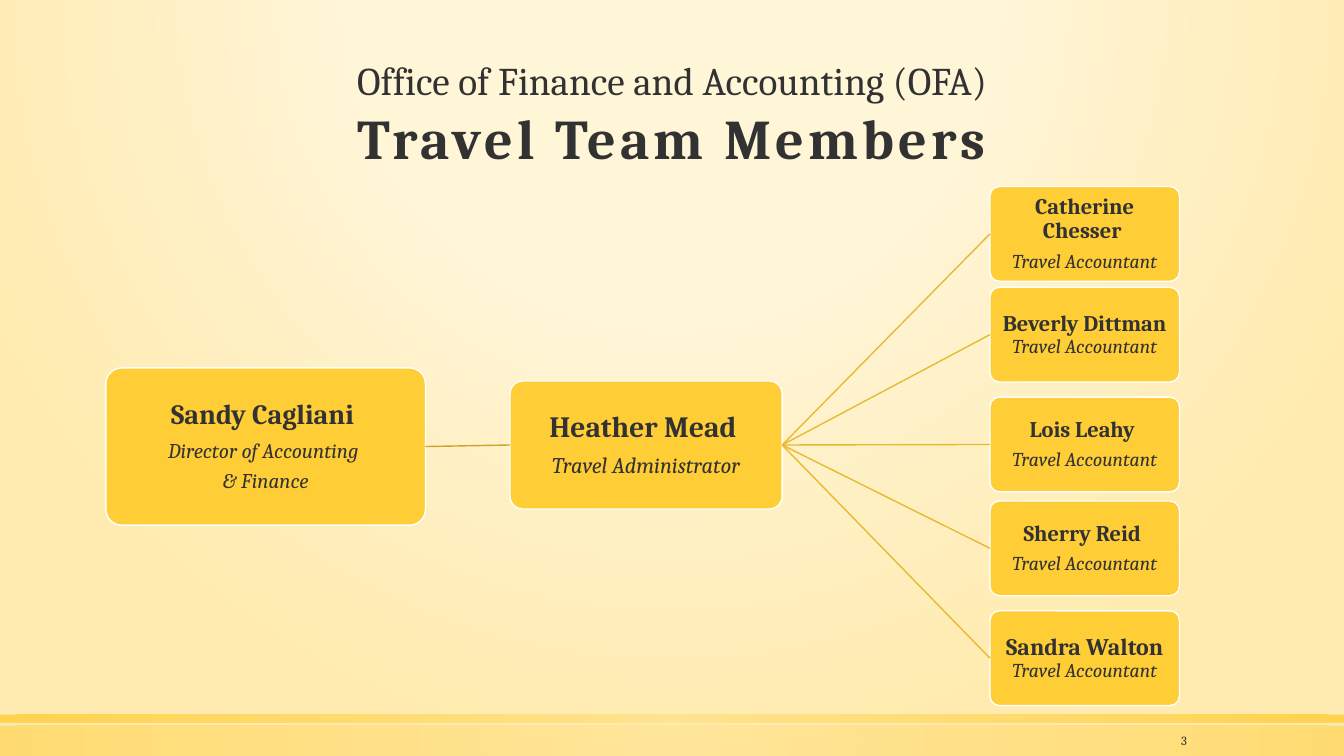
from lxml.etree import SubElement
from pptx import Presentation
from pptx.dml.color import RGBColor
from pptx.enum.shapes import MSO_CONNECTOR, MSO_SHAPE
from pptx.enum.text import MSO_ANCHOR, PP_ALIGN
from pptx.oxml.ns import qn
from pptx.util import Inches, Pt

INK = RGBColor(0x32, 0x32, 0x32)
WHITE = RGBColor(0xFF, 0xFF, 0xFF)
GOLD = RGBColor(0xFF, 0xCD, 0x36)
PALE_GOLD = RGBColor(0xFF, 0xE1, 0x86)
CREAM = RGBColor(0xFF, 0xF5, 0xD7)
SAND = RGBColor(0xFF, 0xEB, 0xAF)
DARK_LINE = RGBColor(0xCC, 0xA4, 0x2B)
LIGHT_LINE = RGBColor(0xE7, 0xBA, 0x31)
FONT = "Cambria"

prs = Presentation()
prs.slide_width, prs.slide_height = Inches(13.33), Inches(7.5)
COL, ROW = prs.slide_width / 100, prs.slide_height / 100
s = prs.slides.add_slide(prs.slide_layouts[6])


def radial_fill(fill, root, stops, top, bottom):
    """Fill with a circular gradient; stops are (position %, colour, opacity %)."""
    fill.gradient()
    grad = next(root.iter(qn("a:gradFill")))
    for child in list(grad):
        grad.remove(child)
    stop_list = SubElement(grad, qn("a:gsLst"))
    for position, color, opacity in stops:
        stop = SubElement(stop_list, qn("a:gs"), pos=str(position * 1000))
        clr = SubElement(stop, qn("a:srgbClr"), val=str(color))
        if opacity < 100:
            SubElement(clr, qn("a:alpha"), val=str(opacity * 1000))
    circle = SubElement(grad, qn("a:path"), {"path": "circle"})
    SubElement(circle, qn("a:fillToRect"), l="50000", t=str(top * 1000),
               r="50000", b=str(bottom * 1000))


def add_run(p, text, size, bold=False, italic=False):
    r = p.add_run()
    r.text = text
    r.font.name, r.font.size = FONT, Pt(size)
    r.font.bold, r.font.italic = bold, italic
    r.font.color.rgb = INK
    return r


# Background and footer bands
radial_fill(s.background.fill, s.element,
            [(0, CREAM, 59), (40, CREAM, 66), (100, SAND, 100)], -80, 180)
for top, height, opacity in [(96, 4, 50), (94.53, 1.07, 80)]:
    sp = s.shapes.add_shape(MSO_SHAPE.RECTANGLE, 0, int(top * ROW),
                            prs.slide_width, int(height * ROW))
    sp.shadow.inherit = False
    sp.line.fill.background()
    radial_fill(sp.fill, sp.element,
                [(0, PALE_GOLD, opacity), (100, GOLD, opacity)], 50, 50)

# Title
title = s.shapes.add_textbox(int(11 * COL), int(6.8 * ROW), int(78 * COL), int(18 * ROW))
tf = title.text_frame
tf.word_wrap = True
p = tf.paragraphs[0]
p.alignment = PP_ALIGN.CENTER
add_run(p, "Office of Finance and Accounting (OFA)", 28)
p.add_line_break()
r = add_run(p, "Travel Team Members", 40, bold=True)
r.font._element.set("spc", "300")

# Slide number
number = s.shapes.add_textbox(int(83.8 * COL), int(96.27 * ROW),
                              int(5.25 * COL), int(3.47 * ROW))
tf = number.text_frame
tf.word_wrap = True
tf.vertical_anchor = MSO_ANCHOR.MIDDLE
p = tf.paragraphs[0]
p.alignment = PP_ALIGN.RIGHT
add_run(p, "3", 9)

# Team: place in columns and rows, then paragraphs of (text, size) runs;
# the first run of each card is the name
DIRECTOR = (7.88, 48.67, 23.78, 20.8)
ADMINISTRATOR = (37.95, 50.4, 20.25, 16.93)
ROLE = ("Travel Accountant", 14)
accountants = [
    (24.67, [[("Catherine Chesser ", 16)], [ROLE]]),
    (38, [[("Beverly Dittman ", 16), ROLE]]),
    (52.53, [[("Lois Leahy ", 16)], [ROLE]]),
    (66.27, [[("Sherry Reid ", 16)], [ROLE]]),
    (80.8, [[("Sandra Walton ", 17), ROLE]]),
]
team = [
    (DIRECTOR, [[("Sandy Cagliani ", 20)], [("Director of Accounting ", 15)],
                [("& Finance", 15)]]),
    (ADMINISTRATOR, [[("Heather Mead ", 21)], [("Travel Administrator", 16)]]),
]
team += [((73.66, top, 14.1, 12.53), text) for top, text in accountants]

cards = []
for (left, top, width, height), paragraphs in team:
    sp = s.shapes.add_shape(MSO_SHAPE.ROUNDED_RECTANGLE, int(left * COL), int(top * ROW),
                            int(width * COL), int(height * ROW))
    sp.adjustments[0] = 0.1
    sp.shadow.inherit = False
    sp.fill.solid()
    sp.fill.fore_color.rgb = GOLD
    sp.line.color.rgb, sp.line.width = WHITE, Pt(1)
    tf = sp.text_frame
    tf.word_wrap = True
    tf.vertical_anchor = MSO_ANCHOR.MIDDLE
    tf.margin_left = tf.margin_right = tf.margin_top = tf.margin_bottom = Inches(0.01)
    for i, runs in enumerate(paragraphs):
        p = tf.add_paragraph() if i else tf.paragraphs[0]
        p.alignment = PP_ALIGN.CENTER
        p.line_spacing = 0.9
        p.space_after = Pt(round(0.35 * runs[0][1], 1))
        for j, (text, size) in enumerate(runs):
            is_name = i == j == 0
            add_run(p, text, size, bold=is_name, italic=not is_name)
    cards.append(sp)

# Reporting lines
director, administrator, *staff = cards
links = [(director, administrator, DARK_LINE)]
links += [(administrator, member, LIGHT_LINE) for member in staff]
for boss, member, color in links:
    line = s.shapes.add_connector(MSO_CONNECTOR.STRAIGHT, 0, 0, 0, 0)
    line.begin_connect(boss, 3)
    line.end_connect(member, 1)
    line.line.color.rgb, line.line.width = color, Pt(1)
    SubElement(line.element.spPr, qn("a:effectLst"))

prs.save("out.pptx")
